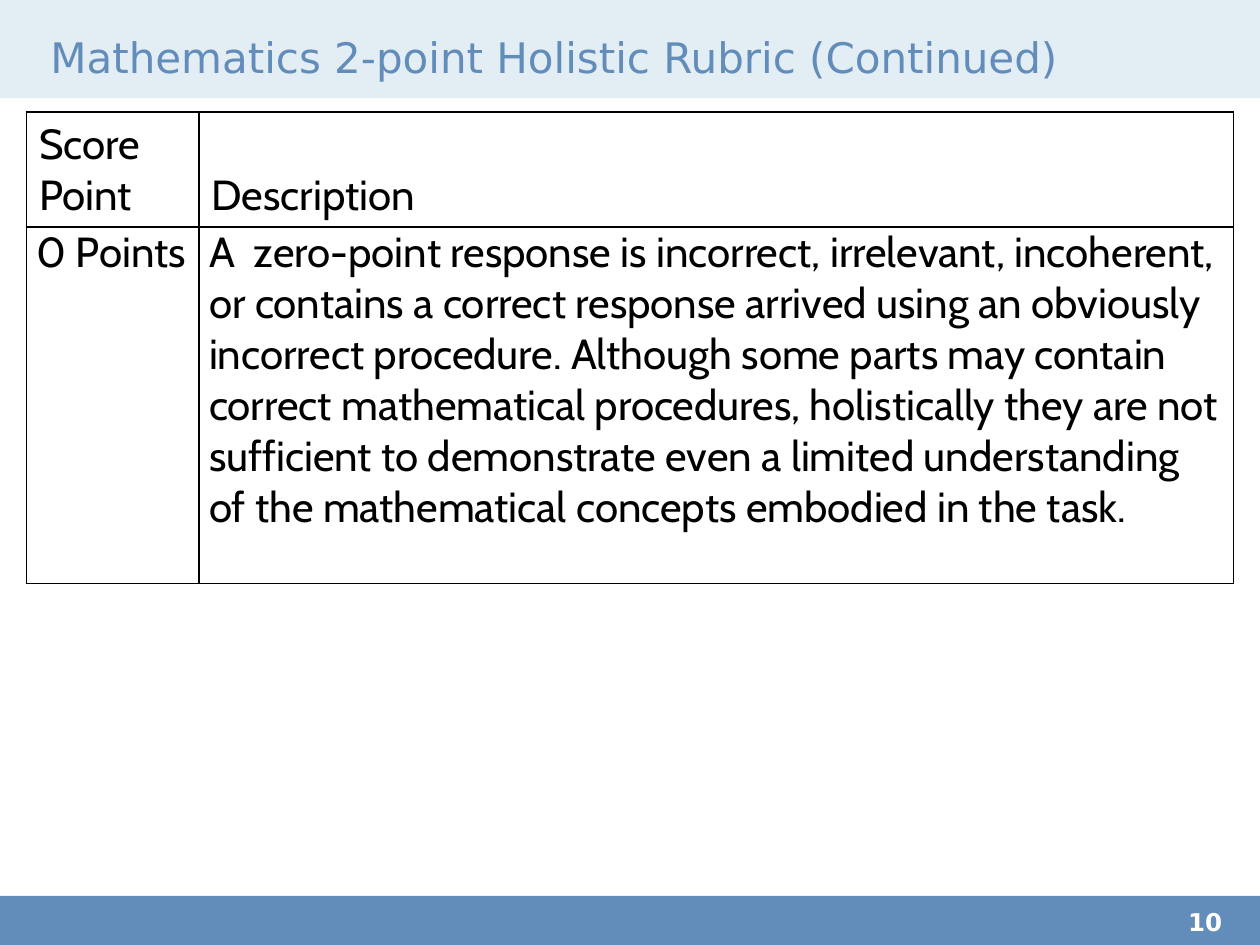
from dataclasses import dataclass

from lxml import etree
from pptx import Presentation
from pptx import util as u
from pptx.dml.color import RGBColor
from pptx.enum import shapes, text
from pptx.oxml import ns


@dataclass(frozen=True)
class Theme:
    """Colours, fonts and type sizes of the slide."""

    blue: str = "628DBB"
    pale: str = "E3EDF4"
    white: str = "FFFFFF"
    black: str = "000000"
    heading_font: str = "DejaVu Sans"
    table_font: str = "Cabin"
    main_size: int = 24
    number_size: int = 14
    border_width: int = 1


THEME = Theme()

RUBRIC = [
    ("Score Point", "Description"),
    (
        "0 Points",
        "A  zero-point response is incorrect, irrelevant, incoherent, "
        "or contains a correct response arrived using an obviously "
        "incorrect procedure. Although some parts may contain "
        "correct mathematical procedures, holistically they are not "
        "sufficient to demonstrate even a limited understanding "
        "of the mathematical concepts embodied in the task.",
    ),
]


def write(holder, wording, font_name, size, color, bold=False):
    """Fill a shape or cell with left-aligned text in one style."""
    frame = holder.text_frame
    frame.text = wording
    frame.word_wrap = True
    for paragraph in frame.paragraphs:
        paragraph.alignment = text.PP_ALIGN.LEFT
        for run in paragraph.runs:
            run.font.name = font_name
            run.font.size = u.Pt(size)
            run.font.bold = bold
            run.font.color.rgb = RGBColor.from_string(color)


def set_margins(holder, left, top, right, bottom):
    """Set the inner margins of a text frame or cell in inches."""
    holder.margin_left = u.Inches(left)
    holder.margin_top = u.Inches(top)
    holder.margin_right = u.Inches(right)
    holder.margin_bottom = u.Inches(bottom)


def add_band(slide, left, top, width, height, color):
    """Draw a plain band of colour."""
    band = slide.shapes.add_shape(
        shapes.MSO_SHAPE.RECTANGLE,
        u.Inches(left), u.Inches(top), u.Inches(width), u.Inches(height),
    )
    band.shadow.inherit = False
    band.fill.solid()
    band.fill.fore_color.rgb = RGBColor.from_string(color)
    band.line.fill.background()


def add_header(slide, left, top, width, height):
    """Draw the header band and set the title on it."""
    add_band(slide, left, top, width, height, THEME.pale)
    title = slide.shapes.title
    title.left, title.top = u.Inches(left + 0.4), u.Inches(top + 0.23)
    title.width, title.height = u.Inches(width - 1), u.Inches(0.49)
    write(title, "Mathematics 2-point Holistic Rubric (Continued)",
          THEME.heading_font, THEME.main_size, THEME.blue)
    set_margins(title.text_frame, 0, 0, 0.1, 0.05)
    title.text_frame.vertical_anchor = text.MSO_ANCHOR.MIDDLE
    slide.shapes.element.append(title.element)


def add_footer(slide, left, top, width, height):
    """Draw the footer band and the slide number at its right end."""
    add_band(slide, left, top, width, height, THEME.blue)
    number = slide.shapes.add_textbox(
        u.Inches(left + width - 0.57), u.Inches(top + 0.09),
        u.Inches(0.57), u.Inches(0.3),
    )
    write(number, "10", THEME.heading_font, THEME.number_size, THEME.white, bold=True)
    set_margins(number.text_frame, 0, 0, 0, 0)


def add_borders(cell):
    """Draw a solid line on all four sides of a cell."""
    properties = cell._tc.get_or_add_tcPr()
    for side in ("a:lnL", "a:lnR", "a:lnT", "a:lnB"):
        line = etree.SubElement(
            properties, ns.qn(side), w=str(u.Pt(THEME.border_width)))
        fill = etree.SubElement(line, ns.qn("a:solidFill"))
        etree.SubElement(fill, ns.qn("a:srgbClr"), val=THEME.black)


def add_rubric(slide, left, top, width, height):
    """Place the table of score points and their descriptions."""
    table = slide.shapes.add_table(
        len(RUBRIC), len(RUBRIC[0]),
        u.Inches(left), u.Inches(top), u.Inches(width), u.Inches(height),
    ).table
    table.first_row = table.horz_banding = False
    score_width, header_height = 1.37, 0.91
    for column, size in zip(table.columns, (score_width, width - score_width)):
        column.width = u.Inches(size)
    for row, size in zip(table.rows, (header_height, height - header_height)):
        row.height = u.Inches(size)
    for row_index, wordings in enumerate(RUBRIC):
        for column_index, wording in enumerate(wordings):
            cell = table.cell(row_index, column_index)
            write(cell, wording, THEME.table_font, THEME.main_size, THEME.black)
            if row_index == 0:
                set_margins(cell, 0.1, 0.05, 0.1, 0.05)
                cell.vertical_anchor = text.MSO_ANCHOR.BOTTOM
            else:
                set_margins(cell, 0.08, 0, 0.08, 0)
                cell.vertical_anchor = text.MSO_ANCHOR.TOP
            add_borders(cell)
            cell.fill.background()


def main():
    """Build the rubric slide and save it."""
    presentation = Presentation()
    presentation.slide_width = u.Inches(10)
    presentation.slide_height = u.Inches(7.5)
    slide = presentation.slides.add_slide(presentation.slide_layouts[5])
    add_header(slide, 0, 0, 10, 0.78)
    add_rubric(slide, 0.21, 0.89, 9.58, 3.74)
    add_footer(slide, 0, 7.11, 10, 0.39)
    presentation.save("out.pptx")


if __name__ == "__main__":
    main()
